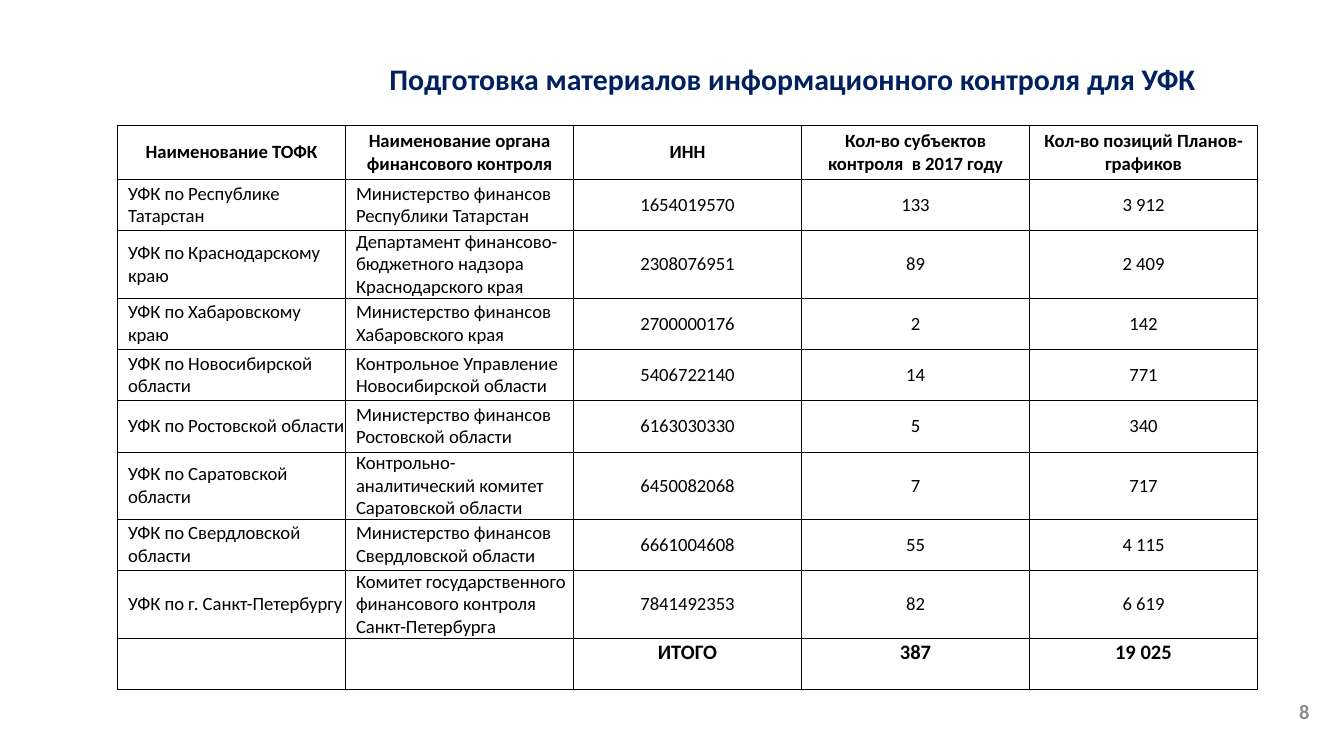
"""Build a slide with the table of control materials for treasury offices."""
from lxml.etree import SubElement
from pptx import Presentation
from pptx.dml.color import RGBColor
from pptx.enum.text import MSO_ANCHOR, PP_ALIGN
from pptx.oxml.ns import qn
from pptx.util import Cm, Pt

NAVY = RGBColor(0x00, 0x20, 0x60)
GRAY = RGBColor(0x8C, 0x8C, 0x8C)
BLACK = RGBColor(0x00, 0x00, 0x00)
WHITE = RGBColor(0xFF, 0xFF, 0xFF)

TITLE = "Подготовка материалов информационного контроля для УФК"
PAGE = "8"
HEAD = ("Наименование ТОФК", "Наименование органа финансового контроля", "ИНН",
        "Кол-во субъектов\nконтроля  в 2017 году", "Кол-во позиций Планов-графиков")
BODY = [
    ("УФК по Республике Татарстан", "Министерство финансов Республики Татарстан",
     "1654019570", "133", "3 912"),
    ("УФК по Краснодарскому краю",
     "Департамент финансово-бюджетного надзора Краснодарского края",
     "2308076951", "89", "2 409"),
    ("УФК по Хабаровскому краю", "Министерство финансов Хабаровского края",
     "2700000176", "2", "142"),
    ("УФК по Новосибирской области", "Контрольное Управление Новосибирской области",
     "5406722140", "14", "771"),
    ("УФК по Ростовской области", "Министерство финансов Ростовской области",
     "6163030330", "5", "340"),
    ("УФК по Саратовской области",
     "Контрольно-аналитический комитет Саратовской области",
     "6450082068", "7", "717"),
    ("УФК по Свердловской области", "Министерство финансов Свердловской области",
     "6661004608", "55", "4 115"),
    ("УФК по г. Санкт-Петербургу",
     "Комитет государственного финансового контроля Санкт-Петербурга",
     "7841492353", "82", "6 619"),
]
TOTAL = ("", "", "ИТОГО", "387", "19 025")
ROWS = [HEAD, *BODY, TOTAL]
HIGH = [1.02, 0.97, 1.25, 0.97, 0.97, 0.97, 1.25, 0.97, 1.25, 0.97]
WIDE = 4.31


def style(para, size, color, bold, align):
    para.alignment = align
    for font in (para.font, *(run.font for run in para.runs)):
        font.name, font.size, font.bold = "Calibri", Pt(size), bold
        font.color.rgb = color


def label(slide, text, box, size, color, align, anchor):
    frame = slide.shapes.add_textbox(*map(Cm, box)).text_frame
    frame.word_wrap = True
    frame.vertical_anchor = anchor
    frame.text = text
    style(frame.paragraphs[0], size, color, True, align)


def border(cell):
    props = cell._tc.get_or_add_tcPr()
    for pos, side in enumerate(("lnL", "lnR", "lnT", "lnB")):
        line = props.makeelement(qn(f"a:{side}"), {"w": str(Pt(0.5))})
        fill = SubElement(line, qn("a:solidFill"))
        SubElement(fill, qn("a:srgbClr"), val=str(BLACK))
        props.insert(pos, line)


def fill_cell(cell, text, row, col):
    last = row == len(ROWS) - 1
    left = col < 2 and 0 < row and not last
    edge = Cm(0.03) if last else 0
    cell.margin_left = cell.margin_right = cell.margin_top = edge
    cell.margin_bottom = 0
    cell.vertical_anchor = MSO_ANCHOR.TOP if last else MSO_ANCHOR.MIDDLE
    para = cell.text_frame.paragraphs[0]
    para.text = text
    if left:
        para._p.get_or_add_pPr().set("marL", str(Cm(0.2)))
    style(para, 11 if last else 10, BLACK, last or row == 0,
          PP_ALIGN.LEFT if left else PP_ALIGN.CENTER)
    if col == 1:
        cell.fill.solid()
        cell.fill.fore_color.rgb = WHITE
    else:
        cell.fill.background()
    border(cell)


def add_grid(slide):
    count = len(HEAD)
    table = slide.shapes.add_table(len(ROWS), count, Cm(2.22), Cm(2.37),
                                   Cm(WIDE * count), Cm(sum(HIGH))).table
    table.first_row = table.horz_banding = False
    for col in table.columns:
        col.width = Cm(WIDE)
    for row, (texts, high) in enumerate(zip(ROWS, HIGH)):
        table.rows[row].height = Cm(high)
        for col, text in enumerate(texts):
            fill_cell(table.cell(row, col), text, row, col)


def main():
    deck = Presentation()
    deck.slide_width, deck.slide_height = Cm(25.4), Cm(14.29)
    slide = deck.slides.add_slide(deck.slide_layouts[6])
    label(slide, PAGE, (19.28, 13.06, 5.72, 0.76), 11, GRAY,
          PP_ALIGN.RIGHT, MSO_ANCHOR.MIDDLE)
    label(slide, TITLE, (7.11, 1.02, 16.99, 0.94), 16, NAVY,
          PP_ALIGN.LEFT, MSO_ANCHOR.TOP)
    add_grid(slide)
    deck.save("out.pptx")


if __name__ == "__main__":
    main()
